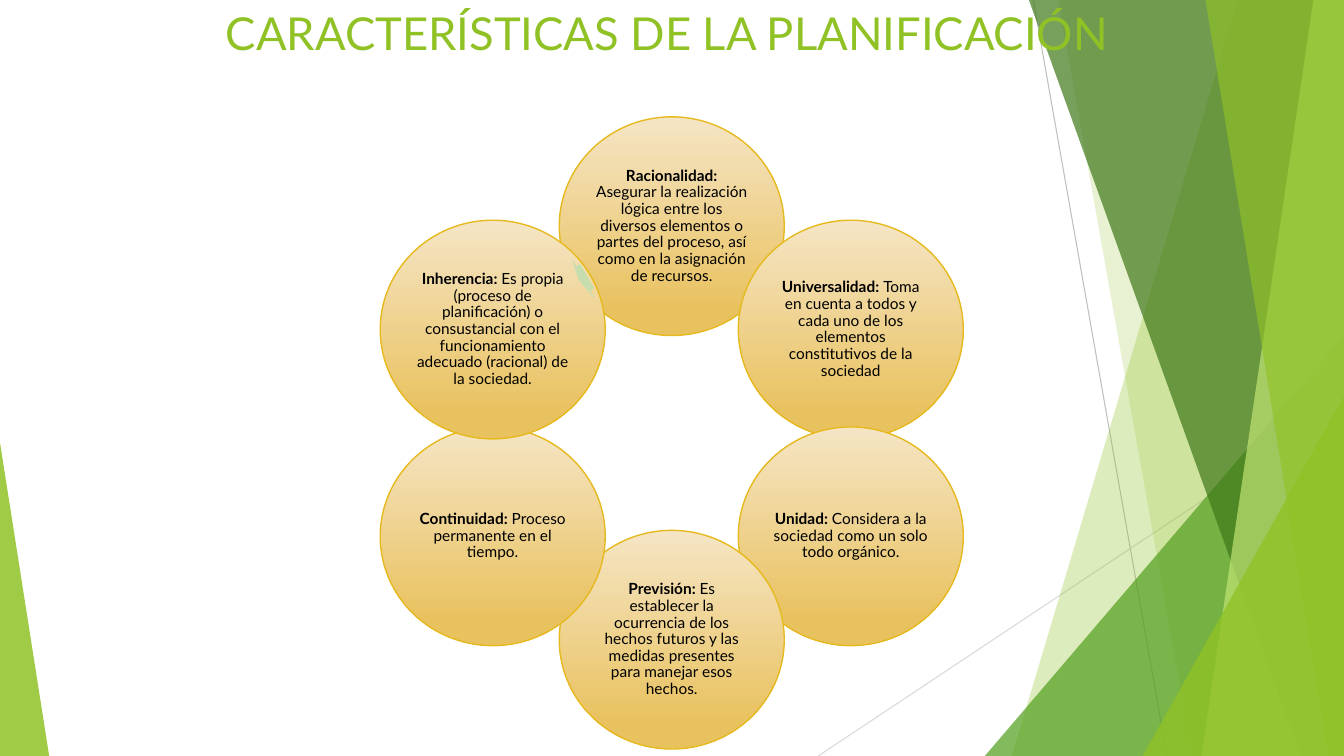
from math import cos, radians, sin

from lxml.etree import SubElement
from pptx import Presentation
from pptx.dml.color import RGBColor
from pptx.enum.shapes import MSO_CONNECTOR, MSO_SHAPE
from pptx.enum.text import MSO_ANCHOR, PP_ALIGN
from pptx.oxml.ns import qn
from pptx.util import Cm, Pt

HEADING = "CARACTERÍSTICAS DE LA PLANIFICACIÓN"
TRAITS = [
    ("Racionalidad: ", "Asegurar la realización lógica entre los diversos elementos o partes del proceso, así como en la asignación de recursos."),
    ("Universalidad: ", "Toma en cuenta a todos y cada uno de los elementos constitutivos de la sociedad"),
    ("Unidad: ", "Considera a la sociedad como un solo todo orgánico."),
    ("Previsión: ", "Es establecer la ocurrencia de los hechos futuros y las medidas presentes para manejar esos hechos."),
    ("Continuidad: ", "Proceso permanente en el tiempo."),
    ("Inherencia: ", "Es propia (proceso de planificación) o consustancial con el funcionamiento adecuado (racional) de la sociedad."),
]

WIDTH, HEIGHT = 33.87, 19.05
RAYS = [
    ((26.04, 0), (29.41, HEIGHT), "BFBFBF"),
    ((WIDTH, 10.24), (20.62, HEIGHT), "D9D9D9"),
]
FACETS = [
    ("band", 31.19, 25.5, "90C226", 30),
    ("band", 26.67, 30.05, "90C226", 20),
    ("corner", 24.82, 8.46, "54A021", 72),
    ("band", 25.93, 32.79, "3F7819", 70),
    ("band", 33.1, 30.28, "C0E474", 70),
    ("band", 30.38, 33.48, "90C226", 65),
    ("corner", 28.8, 9.98, "90C226", 80),
]
LEFT_WEDGE = (0, 11.15, 1.24, HEIGHT - 11.15)

RING_X, RING_Y, RING_RADIUS = 16.93, 10.91, 5.21
DISC_WIDTH, DISC_HEIGHT = 5.67, 5.51
DISC_STOPS = [(0, "F5E5C5"), (0.88, "E9C260")]

TITLE_FRAME = {"word_wrap": True, "vertical_anchor": MSO_ANCHOR.TOP}
TITLE_FONT = {"name": "Lato", "size": Pt(32.4), "bold": False}
DISC_FRAME = {"word_wrap": True, "vertical_anchor": MSO_ANCHOR.MIDDLE}
DISC_FRAME.update({f"margin_{side}": Cm(0.05) for side in ("left", "top", "right", "bottom")})
DISC_PARAGRAPH = {"alignment": PP_ALIGN.CENTER, "line_spacing": 0.9}
DISC_FONT = {"name": "Lato", "size": Pt(11)}


def apply(target, values):
    for name, value in values.items():
        setattr(target, name, value)


def paint(color_format, color):
    color_format.rgb = RGBColor.from_string(color)


def fill_solid(shape, color, opacity=100):
    shape.shadow.inherit = False
    shape.line.fill.background()
    shape.fill.solid()
    paint(shape.fill.fore_color, color)
    if opacity < 100:
        tint = shape.element.spPr.find(qn("a:solidFill"))[0]
        SubElement(tint, qn("a:alpha")).set("val", str(opacity * 1000))


def add_preset(shapes, preset, box, adjustments=()):
    shape = shapes.add_shape(preset, *map(Cm, box))
    for index, value in enumerate(adjustments):
        shape.adjustments[index] = value
    return shape


def add_band(shapes, top_x, bottom_x):
    corners = [(WIDTH, 0), (WIDTH, HEIGHT), (bottom_x, HEIGHT)]
    outline = shapes.build_freeform(Cm(top_x), 0)
    outline.add_line_segments([(Cm(x), Cm(y)) for x, y in corners], close=True)
    return outline.convert_to_shape()


def add_backdrop(shapes):
    for start, end, color in RAYS:
        ray = shapes.add_connector(MSO_CONNECTOR.STRAIGHT, *map(Cm, start + end))
        paint(ray.line.color, color)
        ray.line.width = Pt(0.75)
        SubElement(ray.element.spPr, qn("a:effectLst"))
    for kind, first, second, color, opacity in FACETS:
        if kind == "band":
            facet = add_band(shapes, first, second)
        else:
            box = (first, second, WIDTH - first, HEIGHT - second)
            facet = add_preset(shapes, MSO_SHAPE.ISOSCELES_TRIANGLE, box, [1])
        fill_solid(facet, color, opacity)
    wedge = add_preset(shapes, MSO_SHAPE.ISOSCELES_TRIANGLE, LEFT_WEDGE, [0])
    fill_solid(wedge, "90C226", 85)


def add_title(shapes):
    title = shapes.title
    apply(title, {"left": Cm(5.44), "top": Cm(0), "width": Cm(22.86), "height": Cm(3.18)})
    apply(title.text_frame, TITLE_FRAME)
    paragraph = title.text_frame.paragraphs[0]
    paragraph.alignment = PP_ALIGN.LEFT
    heading = paragraph.add_run()
    heading.text = HEADING
    apply(heading.font, TITLE_FONT)
    paint(heading.font.color, "90C226")
    shapes.element.append(title.element)


def add_disc(shapes, position, trait):
    angle = radians(360 / len(TRAITS) * position)
    left = RING_X + RING_RADIUS * sin(angle) - DISC_WIDTH / 2
    top = RING_Y - RING_RADIUS * cos(angle) - DISC_HEIGHT / 2
    disc = add_preset(shapes, MSO_SHAPE.OVAL, (left, top, DISC_WIDTH, DISC_HEIGHT))
    disc.shadow.inherit = False
    disc.fill.gradient()
    disc.fill.gradient_angle = 270
    for stop, (place, color) in zip(disc.fill.gradient_stops, DISC_STOPS):
        stop.position = place
        paint(stop.color, color)
    paint(disc.line.color, "E6B91E")
    disc.line.width = Pt(1)
    apply(disc.text_frame, DISC_FRAME)
    paragraph = disc.text_frame.paragraphs[0]
    apply(paragraph, DISC_PARAGRAPH)
    for words, bold in zip(trait, (True, False)):
        run = paragraph.add_run()
        run.text = words
        apply(run.font, DISC_FONT | {"bold": bold})
        paint(run.font.color, "000000")


def main():
    deck = Presentation()
    apply(deck, {"slide_width": Cm(WIDTH), "slide_height": Cm(HEIGHT)})
    shapes = deck.slides.add_slide(deck.slide_layouts[5]).shapes
    add_backdrop(shapes)
    add_title(shapes)
    for position, trait in enumerate(TRAITS):
        add_disc(shapes, position, trait)
    arrow = add_preset(shapes, MSO_SHAPE.RIGHT_ARROW, (14.58, 6.43, 0.23, 1.17), [0.6, 0.5])
    arrow.rotation = 150
    fill_solid(arrow, "C6DDAD")
    deck.save("out.pptx")


if __name__ == "__main__":
    main()
